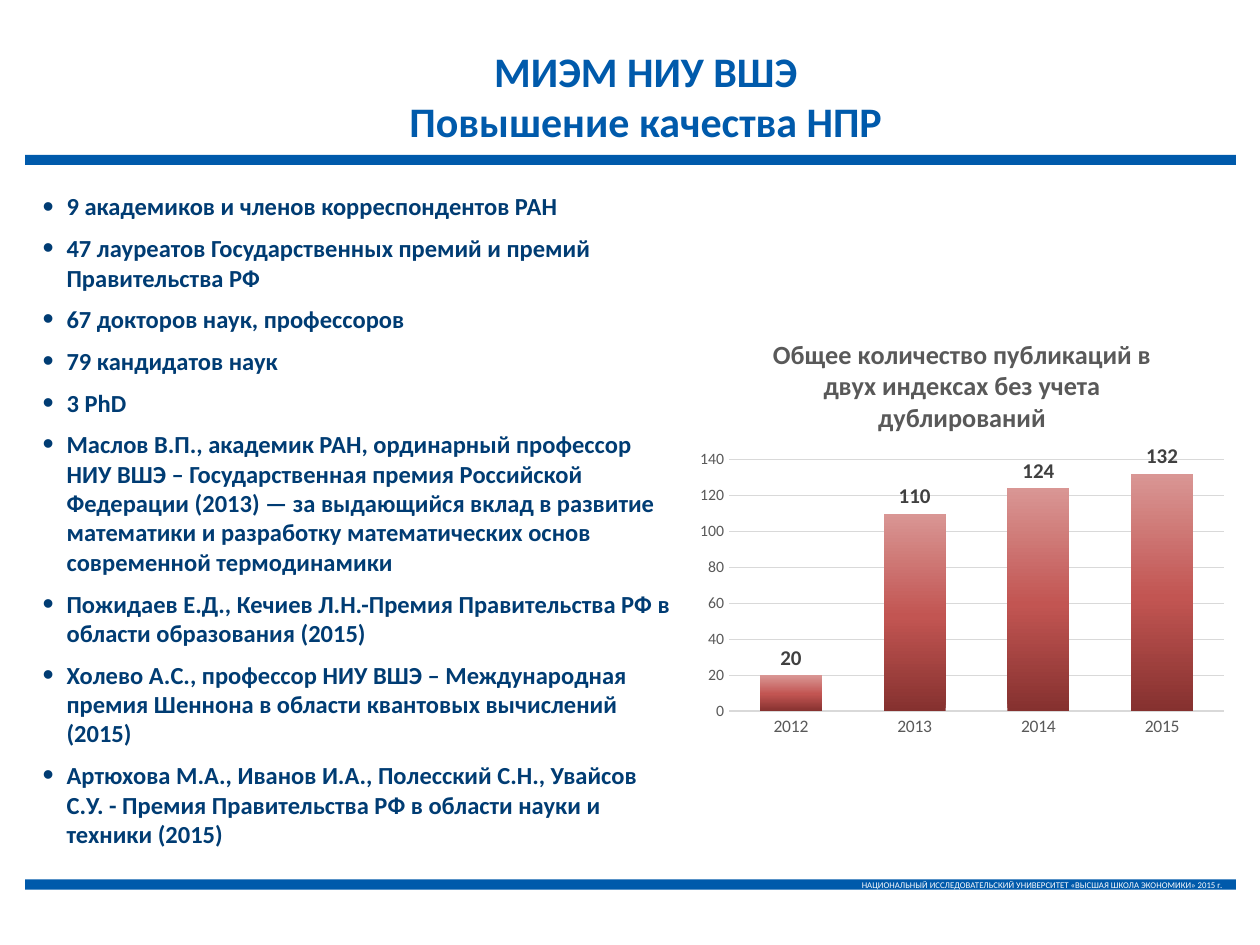
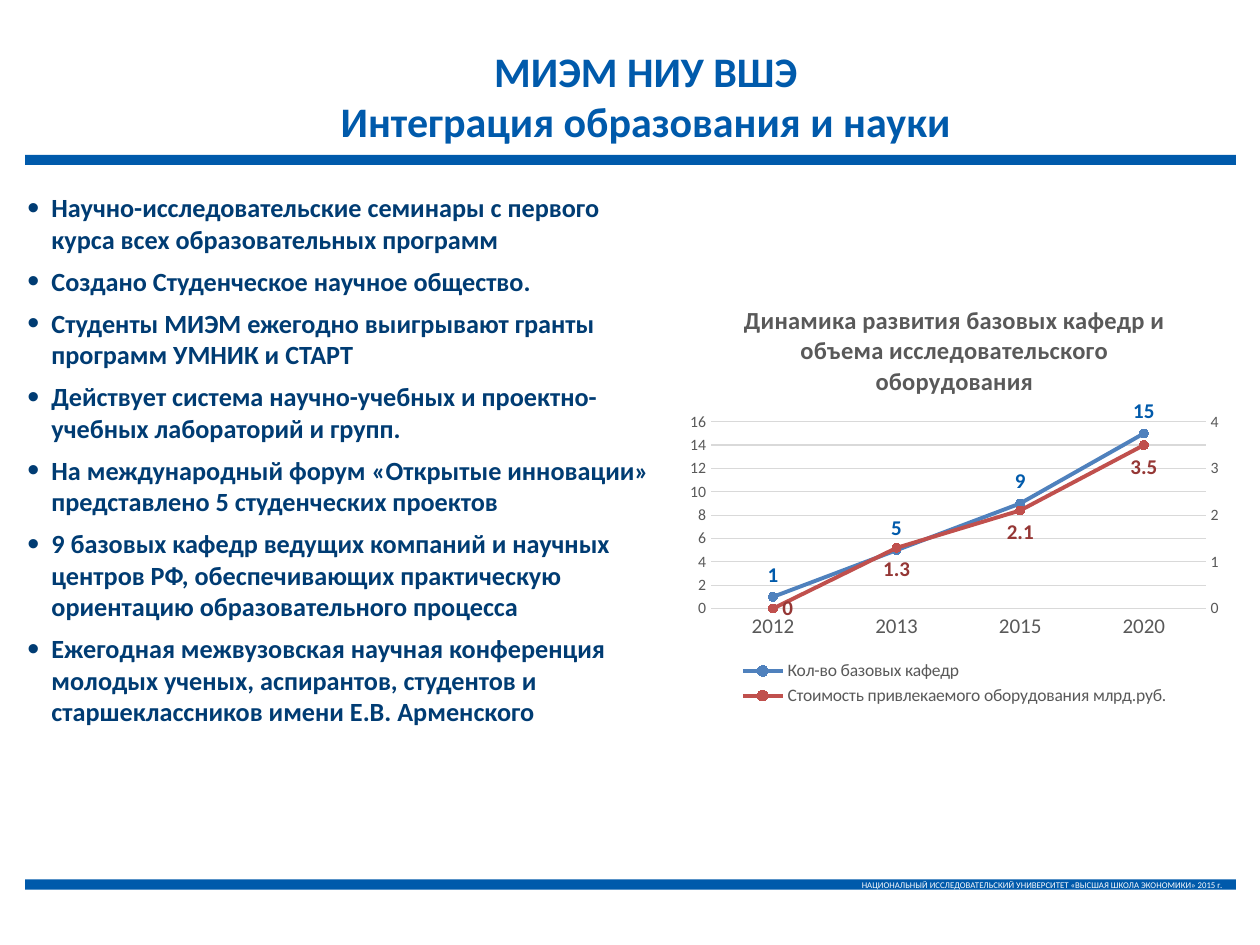
from copy import deepcopy

from pptx import Presentation
from pptx.chart.data import CategoryChartData
from pptx.dml.color import RGBColor
from pptx.enum.chart import (XL_CHART_TYPE, XL_LABEL_POSITION, XL_LEGEND_POSITION,
                             XL_MARKER_STYLE, XL_TICK_MARK)
from pptx.enum.shapes import MSO_SHAPE
from pptx.enum.text import MSO_ANCHOR, PP_ALIGN
from pptx.oxml.ns import qn
from pptx.oxml.xmlchemy import OxmlElement
from pptx.util import Inches, Pt

FONT = "Calibri"
BLUE = RGBColor(0x00, 0x5A, 0xAB)
NAVY = RGBColor(0x00, 0x3C, 0x73)
WHITE = RGBColor(0xFF, 0xFF, 0xFF)
GREY = RGBColor(0x59, 0x59, 0x59)
DARK_GREY = RGBColor(0x40, 0x40, 0x40)
GRID = RGBColor(0xD9, 0xD9, 0xD9)
LINE_BLUE = RGBColor(0x4F, 0x81, 0xBD)
LINE_RED = RGBColor(0xC0, 0x50, 0x4D)
LABEL_RED = RGBColor(0x95, 0x37, 0x35)
BAR_GRADIENT = [(0, RGBColor(0x85, 0x31, 0x2F)), (0.48, RGBColor(0xC2, 0x55, 0x52)),
                (1, RGBColor(0xD9, 0x96, 0x94))]

WIDTH, HEIGHT = Inches(10), Inches(7.5)
INDENT = Inches(0.19)
FOOTER = "НАЦИОНАЛЬНЫЙ ИССЛЕДОВАТЕЛЬСКИЙ УНИВЕРСИТЕТ «ВЫСШАЯ ШКОЛА ЭКОНОМИКИ» 2015 г."

STAFF = [
    "9 академиков и членов корреспондентов РАН",
    "47 лауреатов Государственных премий и премий Правительства РФ",
    "67 докторов наук, профессоров",
    "79 кандидатов наук",
    "3 PhD",
    "Маслов В.П., академик РАН, ординарный профессор НИУ ВШЭ – Государственная премия "
    "Российской Федерации (2013) — за выдающийся вклад в развитие математики и разработку "
    "математических основ современной термодинамики",
    "Пожидаев Е.Д., Кечиев Л.Н.-Премия Правительства РФ в области образования (2015)",
    "Холево А.С., профессор НИУ ВШЭ – Международная премия Шеннона в области квантовых "
    "вычислений (2015)",
    "Артюхова М.А., Иванов И.А., Полесский С.Н., Увайсов С.У. - Премия Правительства РФ "
    "в области науки и техники (2015)",
]
INTEGRATION = [
    "Научно-исследовательские семинары с первого курса всех образовательных программ",
    "Создано Студенческое научное общество.",
    "Студенты МИЭМ ежегодно выигрывают гранты программ УМНИК и СТАРТ",
    "Действует система научно-учебных и проектно-учебных лабораторий и групп.",
    "На международный форум «Открытые инновации» представлено 5 студенческих проектов",
    "9 базовых кафедр ведущих компаний и научных центров РФ, обеспечивающих практическую "
    "ориентацию образовательного процесса",
    "Ежегодная межвузовская научная конференция молодых ученых, аспирантов, студентов и "
    "старшеклассников имени Е.В. Арменского",
]
PUBLICATIONS = "Общее количество публикаций в двух индексах без учета дублирований"
DYNAMICS = "Динамика развития базовых кафедр и объема исследовательского оборудования"


def area(left, top, width, height):
    """Turn percentages of the slide's size into lengths."""
    return [round(share * side / 100) for share, side in
            zip((left, top, width, height), (WIDTH, HEIGHT, WIDTH, HEIGHT))]


def style(font, size, color, bold=False):
    font.name, font.size, font.bold = FONT, Pt(size), bold
    font.color.rgb = color


def add_band(slide, top):
    sp = slide.shapes.add_shape(MSO_SHAPE.RECTANGLE, *area(2, top, 96.1, 1.07))
    sp.shadow.inherit = False
    sp.fill.solid()
    sp.fill.fore_color.rgb = BLUE
    sp.line.fill.background()
    return sp


def add_text_box(slide, box):
    tf = slide.shapes.add_textbox(*area(*box)).text_frame
    tf.word_wrap = True
    return tf


def add_framed_slide(prs, heading):
    """Add a slide with the common title, title band and footer band."""
    slide = prs.slides.add_slide(prs.slide_layouts[6])
    add_band(slide, 16.4)
    tf = add_band(slide, 93.07).text_frame
    tf.vertical_anchor = MSO_ANCHOR.MIDDLE
    p = tf.paragraphs[0]
    p.text, p.alignment = FOOTER, PP_ALIGN.RIGHT
    style(p.runs[0].font, 5, WHITE)

    p = add_text_box(slide, (15.4, 4.13, 71.7, 12.13)).paragraphs[0]
    p.text, p.alignment = f"МИЭМ НИУ ВШЭ\v{heading}", PP_ALIGN.CENTER
    for r in p.runs:
        style(r.font, 24, BLUE, True)
    return slide


def add_bullet(p):
    pPr = p._p.get_or_add_pPr()
    pPr.set("marL", str(INDENT))
    pPr.set("indent", str(-INDENT))
    for tag, name, value in (("a:buSzPct", "val", "130000"),
                             ("a:buFont", "typeface", "Arial"),
                             ("a:buChar", "char", "•")):
        bullet = OxmlElement(tag)
        bullet.set(name, value)
        pPr.append(bullet)


def add_bullets(slide, box, items, size, gap):
    tf = add_text_box(slide, box)
    for i, item in enumerate(items):
        p = tf.paragraphs[0] if i == 0 else tf.add_paragraph()
        p.text = item
        add_bullet(p)
        if i:
            p.space_before = Pt(gap)
        style(p.runs[0].font, size, NAVY, True)


def add_chart(slide, kind, box, title, title_size, years, series):
    data = CategoryChartData()
    data.categories = years
    for name, values in series:
        data.add_series(name, values)
    chart = slide.shapes.add_chart(kind, *area(*box), data).chart
    chart.font.name, chart.font.size = FONT, Pt(10)
    chart.has_legend = False
    chart.has_title = True
    tf = chart.chart_title.text_frame
    tf.text = title
    style(tf.paragraphs[0].runs[0].font, title_size, GREY, True)
    chart.chart_title.include_in_layout = False
    chart.plots[0].vary_by_categories = False
    return chart


def style_axes(chart, year_size, line_width, top, step):
    years, values = chart.category_axis, chart.value_axis
    for axis, size in ((years, year_size), (values, 9)):
        axis.major_tick_mark = axis.minor_tick_mark = XL_TICK_MARK.NONE
        style(axis.tick_labels.font, size, GREY)
    values.minimum_scale, values.maximum_scale, values.major_unit = 0, top, step
    values.has_major_gridlines = True
    for line, width in ((years.format.line, line_width),
                        (values.major_gridlines.format.line, 0.75)):
        line.color.rgb, line.width = GRID, Pt(width)
    values.format.line.fill.background()


def show_values(ser, color, position):
    labels = ser.data_labels
    labels.show_value = True
    labels.position = position
    style(labels.font, 12, color, True)


def fill_gradient(ser):
    fill = ser.format.fill
    fill.gradient()
    fill.gradient_angle = 90
    first = next(ser._element.iter(qn("a:gs")))
    first.addnext(deepcopy(first))
    for stop, (position, color) in zip(fill.gradient_stops, BAR_GRADIENT):
        stop.position = position
        stop.color.rgb = color


def style_line(ser, color):
    ser.smooth = False
    ser.format.line.color.rgb, ser.format.line.width = color, Pt(2.25)
    marker = ser.marker
    marker.style, marker.size = XL_MARKER_STYLE.CIRCLE, 5
    marker.format.fill.solid()
    marker.format.fill.fore_color.rgb = color
    marker.format.line.color.rgb = color


def set_values(element, **values):
    for tag, value in values.items():
        element.find(f".//{qn('c:' + tag)}").set("val", value)


def move_last_series_right(chart, top, step):
    """Give the last series its own value axis on the right side."""
    plot = chart.plots[0]._element
    right_plot = deepcopy(plot)
    plot.remove(plot.findall(qn("c:ser"))[-1])
    right_plot.remove(right_plot.find(qn("c:ser")))
    for ax_id, value in zip(right_plot.findall(qn("c:axId")), ("5001", "5002")):
        ax_id.set("val", value)
    plot.addnext(right_plot)

    left_values = chart.value_axis._element
    years = deepcopy(chart.category_axis._element)
    values = deepcopy(left_values)
    set_values(years, axId="5001", crossAx="5002", delete="1")
    set_values(values, axId="5002", crossAx="5001", axPos="r", crosses="max",
               max=str(top), majorUnit=str(step))
    values.remove(values.find(qn("c:majorGridlines")))
    left_values.addnext(values)
    values.addnext(years)


def add_publications_chart(slide):
    chart = add_chart(slide, XL_CHART_TYPE.COLUMN_CLUSTERED, (54.7, 33.47, 43.3, 45.33),
                      PUBLICATIONS, 15, ["2012", "2013", "2014", "2015"],
                      [(PUBLICATIONS, (20, 110, 124, 132))])
    style_axes(chart, 10, 1, 140, 20)
    plot = chart.plots[0]
    plot.gap_width, plot.overlap = 100, -24
    fill_gradient(plot.series[0])
    show_values(plot.series[0], DARK_GREY, XL_LABEL_POSITION.OUTSIDE_END)


def add_dynamics_chart(slide):
    chart = add_chart(slide, XL_CHART_TYPE.LINE_MARKERS, (53.9, 30, 43.7, 45.2),
                      DYNAMICS, 14, ["2012", "2013", "2015", "2020"],
                      [("Кол-во базовых кафедр", (1, 5, 9, 15)),
                       ("Стоимость привлекаемого оборудования млрд.руб.", (0, 1.3, 2.1, 3.5))])
    style_axes(chart, 12, 0.75, 16, 2)
    chart.has_legend = True
    chart.legend.position = XL_LEGEND_POSITION.BOTTOM
    chart.legend.include_in_layout = False
    style(chart.legend.font, 10, GREY)
    departments, equipment = chart.plots[0].series
    style_line(departments, LINE_BLUE)
    style_line(equipment, LINE_RED)
    show_values(departments, BLUE, XL_LABEL_POSITION.ABOVE)
    show_values(equipment, LABEL_RED, XL_LABEL_POSITION.BELOW)
    start_label = equipment.points[0].data_label
    style(start_label.font, 12, LABEL_RED, True)
    start_label.position = XL_LABEL_POSITION.RIGHT
    move_last_series_right(chart, 4, 1)


def main():
    prs = Presentation()
    prs.slide_width, prs.slide_height = WIDTH, HEIGHT

    slide = add_framed_slide(prs, "Повышение качества НПР")
    add_publications_chart(slide)
    add_bullets(slide, (2.4, 19.6, 52.4, 74.67), STAFF, 14, 7)

    slide = add_framed_slide(prs, "Интеграция образования и науки")
    add_bullets(slide, (1.2, 19.6, 52.7, 72), INTEGRATION, 15, 6)
    add_dynamics_chart(slide)

    prs.save("out.pptx")


if __name__ == "__main__":
    main()
